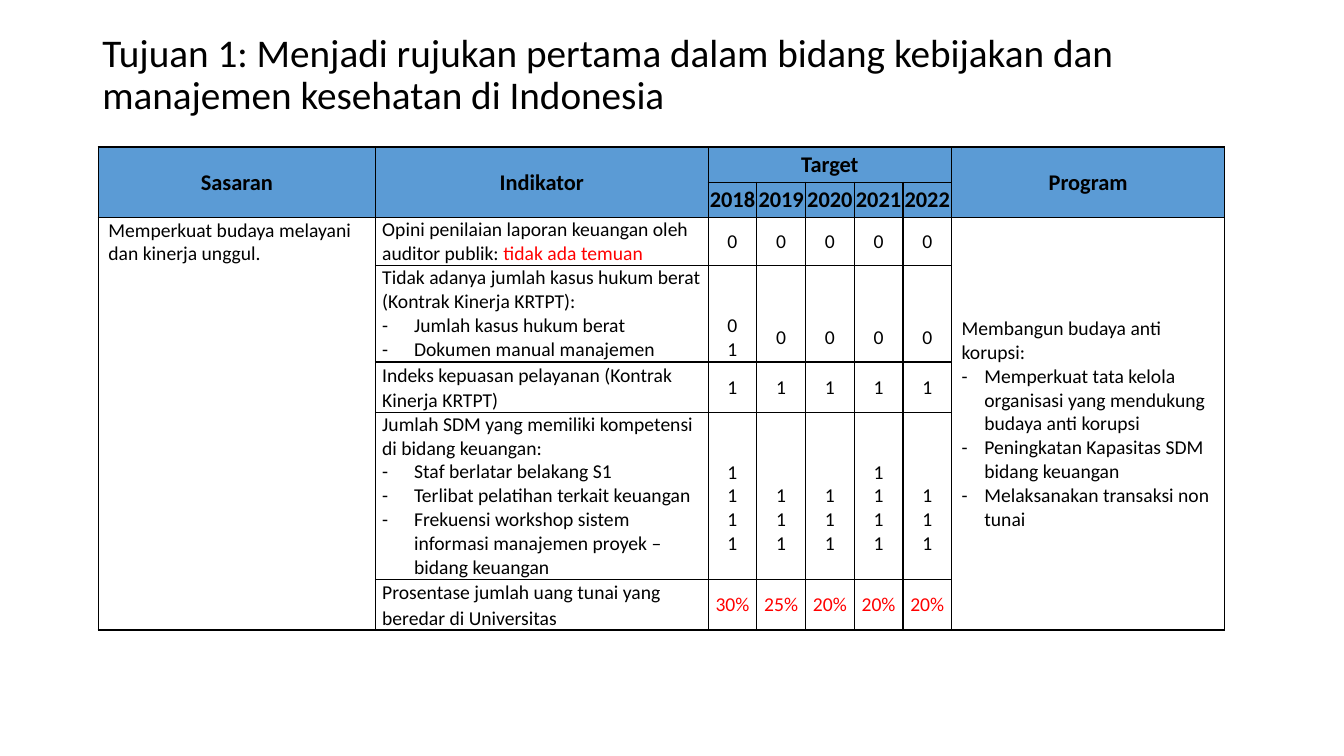
from dataclasses import dataclass

from lxml import etree
from pptx import Presentation
from pptx import util as u
from pptx.dml.color import RGBColor
from pptx.enum import text
from pptx.oxml.ns import qn

PX = 7620  # 120 px to the inch
BLACK = RGBColor(0, 0, 0)
WHITE = RGBColor(255, 255, 255)
RED = RGBColor(255, 0, 0)
BLUE = RGBColor(0x5B, 0x9B, 0xD5)
FONT = "Calibri"
LEFT, MID = text.PP_ALIGN.LEFT, text.PP_ALIGN.CENTER
TIGHT = (1, 1, 1, 0)
WIDE = (8, 0, 8, 0)
LINE = 28  # height of one 14 pt line
COLS = [330, 396] + [58] * 5 + [325]
ROWS = [42, 42, 57, 115, 60, 199, 60]


@dataclass
class Para:
    words: str
    red: str = ""
    left: int = 0
    hang: int = 0
    lead: float = 1.0


@dataclass
class Style:
    fill: RGBColor = WHITE
    color: RGBColor = BLACK
    size: int = 14
    bold: bool = False
    align: text.PP_ALIGN = LEFT
    inset: tuple[int, int, int, int] = WIDE
    top: bool = False


@dataclass
class Goal:
    paras: list[Para]
    marks: list[str]
    skips: list[int]
    top: bool = False
    color: RGBColor = BLACK


def px(size: int) -> u.Emu:
    return u.Emu(size * PX)


def item(words: str, hang: int = 38) -> Para:
    return Para(words, left=38, hang=hang)


HEAD = Style(BLUE, size=16, bold=True, align=MID, inset=TIGHT)
AIM = Para("Memperkuat budaya melayani dan kinerja unggul.", left=11)
PLAN = [
    Para("Membangun budaya anti korupsi:", left=11),
    item("Memperkuat tata kelola organisasi yang mendukung budaya anti korupsi", 27),
    item("Peningkatan Kapasitas SDM bidang keuangan", 27),
    item("Melaksanakan transaksi non tunai", 27),
]
GOALS = [
    Goal([Para("Opini penilaian laporan keuangan oleh auditor publik: ",
               "tidak ada temuan")], ["0"] * 5, [0] * 5, top=True),
    Goal([Para("Tidak adanya jumlah kasus hukum berat (Kontrak Kinerja KRTPT):"),
          item("Jumlah kasus hukum berat"),
          item("Dokumen manual manajemen")],
         ["0 1"] + ["0"] * 4, [2] * 5),
    Goal([Para("Indeks kepuasan pelayanan (Kontrak Kinerja KRTPT)", lead=1.07)],
         ["1"] * 5, [0] * 5),
    Goal([Para("Jumlah SDM yang memiliki kompetensi di bidang keuangan:"),
          item("Staf berlatar belakang S1"),
          item("Terlibat pelatihan terkait keuangan"),
          item("Frekuensi workshop sistem informasi manajemen proyek – bidang keuangan")],
         ["1 1 1 1", "1 1 1", "1 1 1", "1 1 1 1", "1 1 1"], [1, 2, 2, 1, 2]),
    Goal([Para("Prosentase jumlah uang tunai yang beredar di Universitas", lead=1.07)],
         ["30%", "25%", "20%", "20%", "20%"], [0] * 5, color=RED),
]


def write(frame, paras: list[Para], style: Style) -> None:
    for i, para in enumerate(paras):
        p = frame.add_paragraph() if i else frame.paragraphs[0]
        p.alignment = style.align
        p.line_spacing = para.lead
        props = p._p.get_or_add_pPr()
        props.set("marL", str(px(para.left)))
        props.set("indent", str(px(-para.hang)))
        if para.hang:
            etree.SubElement(props, qn("a:buFont"), typeface=FONT)
            etree.SubElement(props, qn("a:buChar"), char="-")
        p.font.name = FONT
        p.font.size = u.Pt(style.size)
        p.font.bold = style.bold
        p.font.color.rgb = style.color
        p.add_run().text = para.words
        if para.red:
            run = p.add_run()
            run.text = para.red
            run.font.color.rgb = RED


def border(cell) -> None:
    props = cell._tc.get_or_add_tcPr()
    for i, side in enumerate("LRTB"):
        line = etree.Element(qn(f"a:ln{side}"), w=str(u.Pt(1)))
        fill = etree.SubElement(line, qn("a:solidFill"))
        etree.SubElement(fill, qn("a:srgbClr"), val=str(BLACK))
        props.insert(i, line)


def put(cell, paras: list[Para], style: Style, skip: int = 0) -> None:
    """Fill a cell, starting its text skip lines lower."""
    cell.fill.solid()
    cell.fill.fore_color.rgb = style.fill
    left, top, right, low = style.inset
    cell.margin_left, cell.margin_right = px(left), px(right)
    cell.margin_top, cell.margin_bottom = px(top + skip * LINE), px(low)
    cell.vertical_anchor = text.MSO_ANCHOR.TOP if style.top else text.MSO_ANCHOR.MIDDLE
    write(cell.text_frame, paras, style)


def title(slide) -> None:
    box = slide.shapes.add_textbox(px(110), px(48), px(1342), px(85))
    frame = box.text_frame
    frame.word_wrap = True
    frame.vertical_anchor = text.MSO_ANCHOR.MIDDLE
    write(frame, [Para("Tujuan 1: Menjadi rujukan pertama dalam bidang kebijakan dan "
                       "manajemen kesehatan di Indonesia", lead=0.9)], Style(size=28))


def grid(slide) -> None:
    shape = slide.shapes.add_table(len(ROWS), len(COLS), px(117), px(175),
                                   px(sum(COLS)), px(sum(ROWS)))
    table = shape.table
    table.first_row = table.horz_banding = False
    for col, wide in zip(table.columns, COLS):
        col.width = px(wide)
    for row, high in zip(table.rows, ROWS):
        row.height = px(high)
    for c in (0, 1, 7):
        table.cell(0, c).merge(table.cell(1, c))
    for c in (0, 7):
        table.cell(2, c).merge(table.cell(6, c))
    table.cell(0, 2).merge(table.cell(0, 6))

    for c, name in ((0, "Sasaran"), (1, "Indikator"), (2, "Target"), (7, "Program")):
        put(table.cell(0, c), [Para(name)], HEAD)
    for c in range(2, 7):
        put(table.cell(1, c), [Para(str(2016 + c))], HEAD)
    put(table.cell(2, 0), [AIM], Style(inset=TIGHT, top=True))
    put(table.cell(2, 7), PLAN, Style(inset=TIGHT))
    for r, goal in enumerate(GOALS, 2):
        put(table.cell(r, 1), goal.paras, Style(top=goal.top))
        style = Style(color=goal.color, align=MID, inset=TIGHT)
        for c, (mark, skip) in enumerate(zip(goal.marks, goal.skips), 2):
            put(table.cell(r, c), [Para(m) for m in mark.split()], style, skip)
    for cell in table.iter_cells():
        border(cell)


def main() -> None:
    deck = Presentation()
    deck.slide_width, deck.slide_height = px(1600), px(900)
    slide = deck.slides.add_slide(deck.slide_layouts[6])
    title(slide)
    grid(slide)
    deck.save("out.pptx")


if __name__ == "__main__":
    main()
